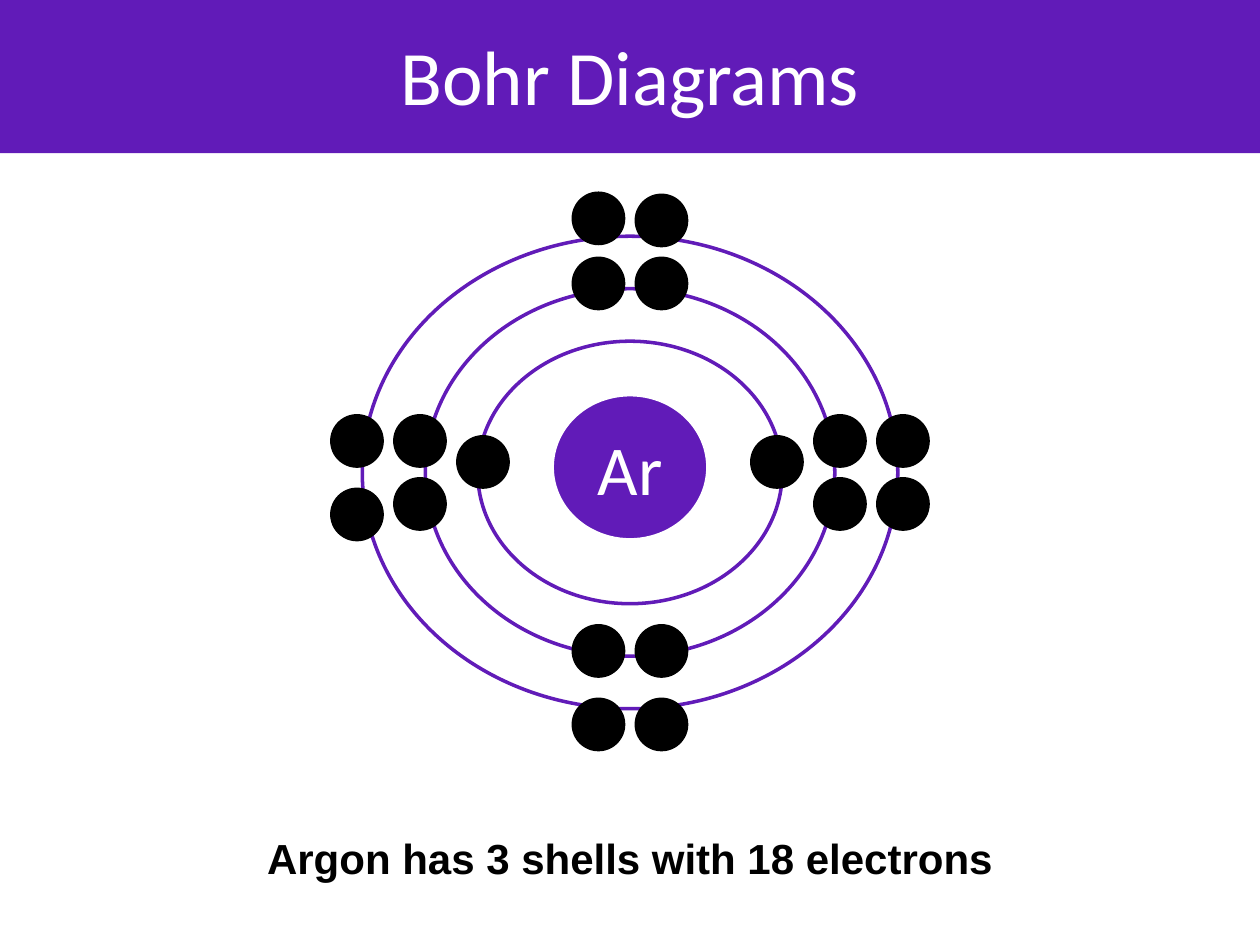
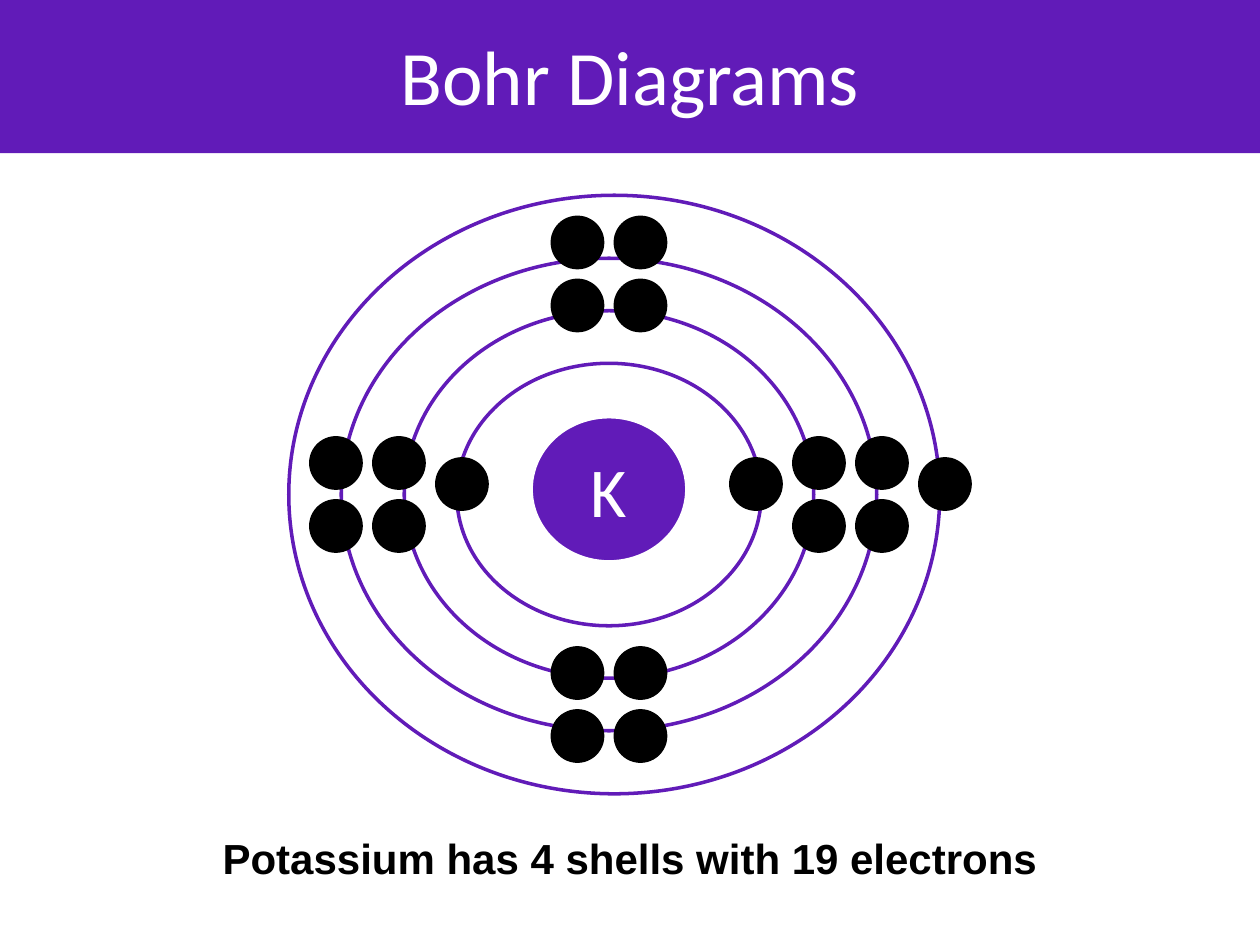
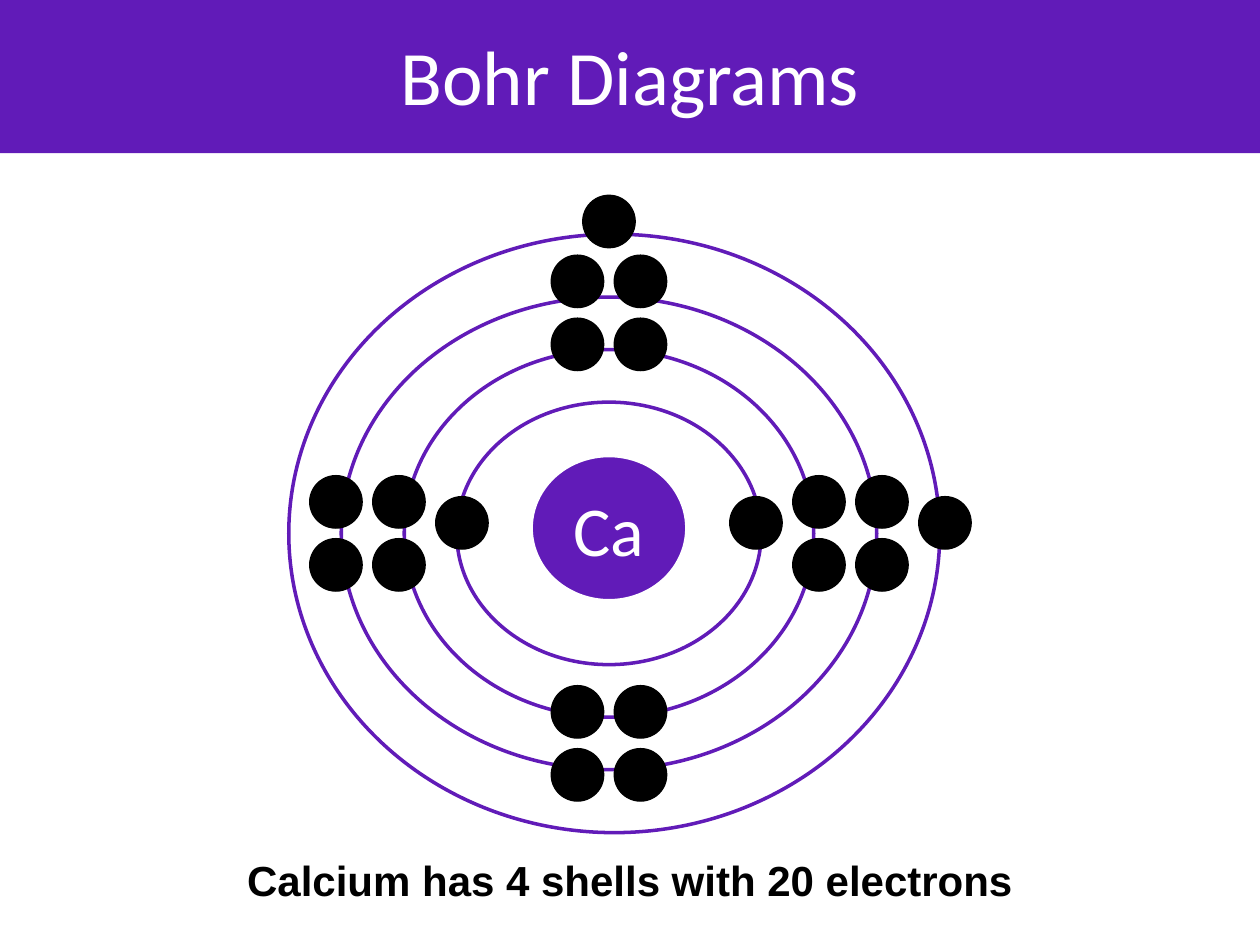
from itertools import product

from pptx import Presentation
from pptx.dml.color import RGBColor
from pptx.enum.shapes import MSO_SHAPE
from pptx.enum.text import MSO_ANCHOR, MSO_AUTO_SIZE, PP_ALIGN
from pptx.util import Emu, Pt

OVAL = MSO_SHAPE.OVAL
MIDDLE = MSO_ANCHOR.MIDDLE
CENTER = PP_ALIGN.CENTER
FIXED_SIZE = MSO_AUTO_SIZE.NONE

PX = 7620  # 120 px to the inch
PURPLE, WHITE, BLACK = "611BB8", "FFFFFF", "000000"
TITLE_ONLY_LAYOUT = 5

TITLE_BOX = (0, -4, 1200, 150)
TITLE_FONT = {"name": "Calibri", "size": Pt(44), "bold": False}
NUCLEUS_FONT = {"name": "Calibri", "size": Pt(40)}
CAPTION_FONT = {"name": "Arial", "size": Pt(24), "bold": True}

# Diagram lengths start at the top left corner of the third shell's box.
SHELLS = [(110, 100, 290, 250), (60, 50, 390, 350),
          (0, 0, 510, 450), (-50, -60, 620, 570)]
NUCLEUS = (180, 150, 150, 140)
ELECTRON_SIZE = 50
PAIR_X, PAIR_Y = (200, 260), (170, 230)
FIRST_SHELL = [(370, 190), (90, 190)]
RIGHT_VALENCE, TOP_VALENCE = (550, 190), (230, -97)


def octet(left, right, top, bottom):
    """Return the corners of eight electrons, a pair on each side of a shell."""
    return [*product((left, right), PAIR_Y), *product(PAIR_X, (top, bottom))]


CORE = FIRST_SHELL + octet(30, 430, 20, 370)
ARGON = CORE + [(-30, 170), (-30, 240), (490, 170), (490, 230),
                (200, -42), (260, -40), (200, 440), (260, 440)]
POTASSIUM = CORE + octet(-30, 490, -40, 430) + [RIGHT_VALENCE]
CALCIUM = POTASSIUM + [TOP_VALENCE]

ATOMS = [
    {"symbol": "Ar", "name": "Argon", "shells": 3, "electrons": ARGON,
     "origin": (345, 225), "caption_top": 775},
    {"symbol": "K", "name": "Potassium", "shells": 4, "electrons": POTASSIUM,
     "origin": (325, 246), "caption_top": 775},
    {"symbol": "Ca", "name": "Calcium", "shells": 4, "electrons": CALCIUM,
     "origin": (325, 283), "caption_top": 796},
]


def px(*lengths):
    return [Emu(length * PX) for length in lengths]


def fill_with(target, color):
    target.solid()
    target.fore_color.rgb = RGBColor.from_string(color)


def write(shape, text, font, color, vertical_inset=12):
    """Put one centred line of text in a shape."""
    frame = shape.text_frame
    side, edge = px(12, vertical_inset)
    frame_format = {"word_wrap": True, "auto_size": FIXED_SIZE,
                    "vertical_anchor": MIDDLE,
                    "margin_left": side, "margin_right": side,
                    "margin_top": edge, "margin_bottom": edge}
    for key, value in frame_format.items():
        setattr(frame, key, value)
    para = frame.paragraphs[0]
    para.alignment = CENTER
    span = para.add_run()
    span.text = text
    for key, value in font.items():
        setattr(span.font, key, value)
    span.font.color.rgb = RGBColor.from_string(color)


def add_oval(page, origin, box, fill, line, line_width):
    left, top, width, height = box
    oval = page.shapes.add_shape(
        OVAL, *px(origin[0] + left, origin[1] + top, width, height))
    oval.shadow.inherit = False
    fill_with(oval.fill, fill)
    fill_with(oval.line.fill, line)
    oval.line.width = Pt(line_width)
    return oval


def add_title(page):
    title = page.shapes.title
    title.left, title.top, title.width, title.height = px(*TITLE_BOX)
    fill_with(title.fill, PURPLE)
    write(title, "Bohr Diagrams", TITLE_FONT, WHITE)


def add_atom(page, origin, symbol, shell_count, electrons):
    for shell in reversed(SHELLS[:shell_count]):
        add_oval(page, origin, shell, WHITE, PURPLE, 2)
    nucleus = add_oval(page, origin, NUCLEUS, PURPLE, WHITE, 3)
    write(nucleus, symbol, NUCLEUS_FONT, WHITE, vertical_inset=6)
    for left, top in electrons:
        box = (left, top, ELECTRON_SIZE, ELECTRON_SIZE)
        add_oval(page, origin, box, BLACK, BLACK, 0.75)


def add_caption(page, top, text):
    caption = page.shapes.add_textbox(*px(60, top, 1080, 84))
    write(caption, text, CAPTION_FONT, BLACK)


def add_atom_page(deck, atom):
    page = deck.slides.add_slide(deck.slide_layouts[TITLE_ONLY_LAYOUT])
    electrons = atom["electrons"]
    add_title(page)
    add_atom(page, atom["origin"], atom["symbol"], atom["shells"], electrons)
    add_caption(page, atom["caption_top"],
                f"{atom['name']} has {atom['shells']} shells "
                f"with {len(electrons)} electrons")


def main():
    deck = Presentation()
    deck.slide_width, deck.slide_height = px(1200, 900)
    for atom in ATOMS:
        add_atom_page(deck, atom)
    deck.save("out.pptx")


if __name__ == "__main__":
    main()
